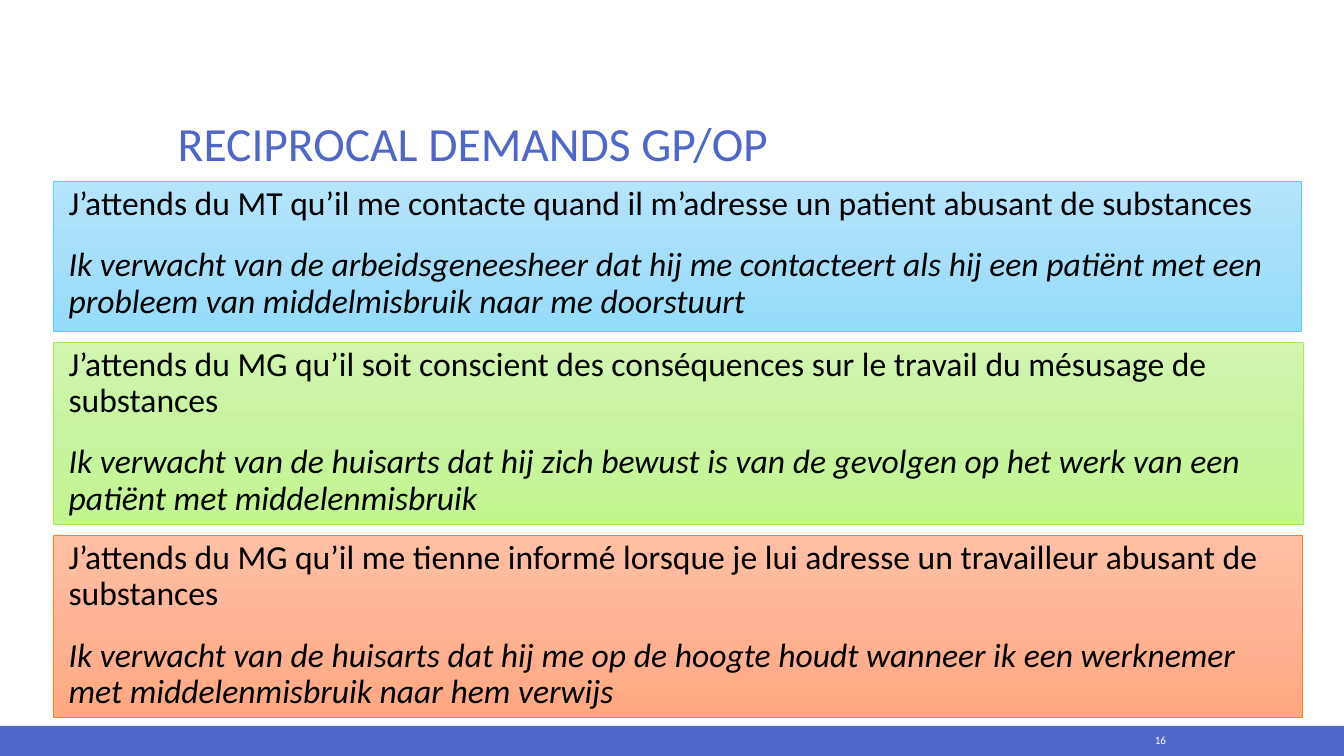
from copy import deepcopy

from pptx import Presentation
from pptx.dml.color import RGBColor as RGB
from pptx.enum.shapes import MSO_SHAPE as SHAPE
from pptx.enum.text import MSO_ANCHOR as ANCHOR, PP_ALIGN as ALIGN
from pptx.oxml.ns import qn
from pptx.util import Cm, Pt

FONT = "Calibri"
COLORS = {"accent": "4E67C8", "text": "000000", "white": "FFFFFF"}
BLUE = {"stops": ("B5E5FB", "A6DFF9", "95DDFB"), "line": "5ECCF3"}
GREEN = {"stops": ("D2F5AF", "C8F3A0", "C2F58F"), "line": "A7EA52"}
ORANGE = {"stops": ("FFBFA3", "FFB394", "FFA881"), "line": "FF8021"}

# width, height, palette, French sentence, Dutch sentence
DEMANDS = [
    (31.45, 3.78, BLUE,
     "J’attends du MT qu’il me contacte quand il m’adresse un patient abusant de substances",
     "Ik verwacht van de arbeidsgeneesheer dat hij me contacteert als hij een patiënt "
     "met een probleem van middelmisbruik naar me doorstuurt"),
    (31.5, 4.6, GREEN,
     "J’attends du MG qu’il soit conscient des conséquences sur le travail du mésusage "
     "de substances",
     "Ik verwacht van de huisarts dat hij zich bewust is van de gevolgen op het werk "
     "van een patiënt met middelenmisbruik"),
    (31.47, 4.6, ORANGE,
     "J’attends du MG qu’il me tienne informé lorsque je lui adresse un travailleur "
     "abusant de substances",
     "Ik verwacht van de huisarts dat hij me op de hoogte houdt wanneer ik een "
     "werknemer met middelenmisbruik naar hem verwijs"),
]
DEMANDS_LEFT, DEMANDS_TOP, DEMANDS_GAP = 1.35, 4.57, 0.27


def set_attrs(obj, values):
    for name, value in values.items():
        setattr(obj, name, value)


def write(p, text, size, color, italic=False, **layout):
    r = p.add_run()
    r.text = text
    set_attrs(r.font, {"name": FONT, "size": Pt(size), "italic": italic})
    r.font.color.rgb = RGB.from_string(COLORS[color])
    set_attrs(p, layout)


def add_rect(s, x, y, w, h):
    sp = s.shapes.add_shape(SHAPE.RECTANGLE, Cm(x), Cm(y), Cm(w), Cm(h))
    sp.shadow.inherit = False
    return sp


def add_label(s, x, y, w, h, anchor, text, size, color, **layout):
    tf = s.shapes.add_textbox(Cm(x), Cm(y), Cm(w), Cm(h)).text_frame
    set_attrs(tf, {"word_wrap": True, "vertical_anchor": anchor})
    write(tf.paragraphs[0], text, size, color, **layout)


def fill_gradient(sp, colors):
    """Fill from top to bottom with three evenly spaced colours."""
    sp.fill.gradient()
    sp.fill.gradient_angle = 270
    first = next(sp._element.spPr.iter(qn("a:gs")))
    first.addnext(deepcopy(first))
    for i, (stop, color) in enumerate(zip(sp.fill.gradient_stops, colors)):
        stop.position = i / 2
        stop.color.rgb = RGB.from_string(color)


def add_demand(s, x, y, w, h, palette, french, dutch):
    sp = add_rect(s, x, y, w, h)
    fill_gradient(sp, palette["stops"])
    sp.line.color.rgb = RGB.from_string(palette["line"])
    sp.line.width = Pt(0.5)
    tf = sp.text_frame
    set_attrs(tf, {"word_wrap": True, "vertical_anchor": ANCHOR.TOP})
    layout = {"alignment": ALIGN.LEFT, "line_spacing": 0.9, "space_before": Pt(18)}
    for p, text, italic in ((tf.paragraphs[0], french, False),
                            (tf.add_paragraph(), dutch, True)):
        write(p, text, 24, "text", italic, **layout)
        p._p.get_or_add_pPr().set("marL", str(Cm(0.13)))


def add_demands(s, x, y, gap):
    for w, h, *content in DEMANDS:
        add_demand(s, x, y, w, h, *content)
        y += h + gap


def add_footer(s, x, y, w, h):
    bar = add_rect(s, x, y, w, h)
    bar.fill.solid()
    bar.fill.fore_color.rgb = RGB.from_string(COLORS["accent"])
    bar.line.fill.background()
    add_label(s, x + 27.48, y + 0.05, 2.16, 0.64, ANCHOR.MIDDLE,
              "16", 8, "white", alignment=ALIGN.RIGHT)


def main():
    prs = Presentation()
    set_attrs(prs, {"slide_width": Cm(33.87), "slide_height": Cm(19.05)})
    s = prs.slides.add_slide(prs.slide_layouts[6])
    add_footer(s, 0, 18.29, 33.87, 0.76)
    add_label(s, 4.23, 1.27, 25.4, 3.18, ANCHOR.BOTTOM,
              "RECIPROCAL DEMANDS GP/OP", 34, "accent", line_spacing=0.9)
    add_demands(s, DEMANDS_LEFT, DEMANDS_TOP, DEMANDS_GAP)
    prs.save("out.pptx")


if __name__ == "__main__":
    main()
